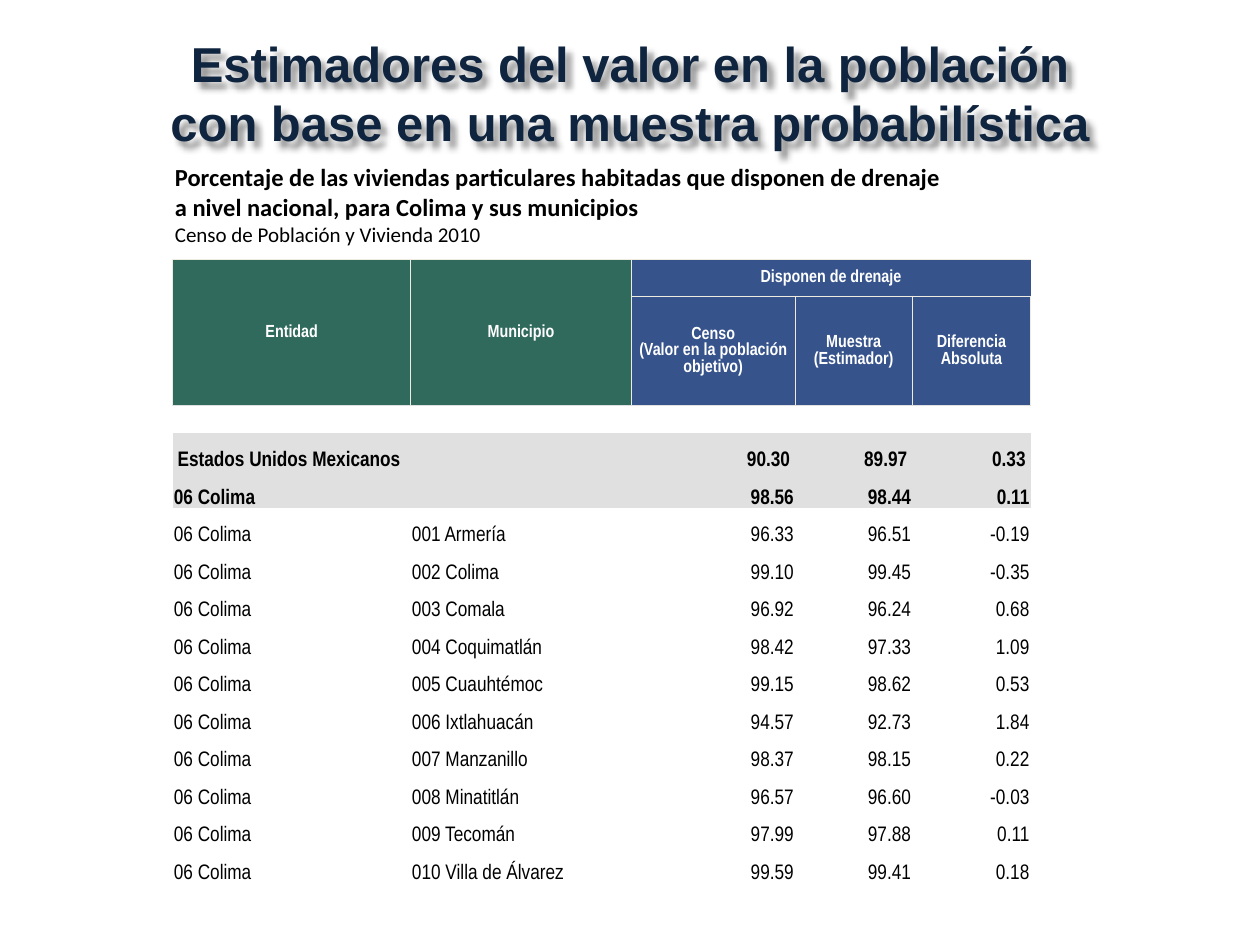
from dataclasses import dataclass

from lxml.etree import SubElement
from pptx import Presentation
from pptx.dml.color import RGBColor
from pptx.enum.text import MSO_ANCHOR, PP_ALIGN
from pptx.oxml.ns import qn
from pptx.util import Inches, Pt


@dataclass(frozen=True)
class Theme:
    navy: str = "0F243E"
    black: str = "000000"
    white: str = "FFFFFF"
    green: str = "306A5C"
    blue: str = "36538C"
    grey: str = "E0E0E0"
    cream: str = "EEECE1"
    title_font: str = "Arial"
    subtitle_font: str = "Calibri"
    table_font: str = "Arial Narrow"
    title_size: int = 28
    title_leading: int = 34
    subtitle_size: int = 14
    source_size: int = 12
    header_size: int = 10
    body_size: int = 12


THEME = Theme()
NO_GRID_STYLE = "{2D5ABB26-0587-4C30-8999-92F81FD0307C}"

# Column widths and row heights of the table, in inches
COLUMNS = (1.89, 1.75, 1.30, 0.93, 0.94)
HEADER_ROWS = (0.29, 0.87, 0.22)
BLANK_ROW = len(HEADER_ROWS) - 1

HEADERS = (  # row, column, last row, last column, text, fill, side inset
    (0, 0, 1, 0, "Entidad", THEME.green, 0.01),
    (0, 1, 1, 1, "Municipio", THEME.green, 0.01),
    (0, 2, 0, 4, "Disponen de drenaje", THEME.blue, 0.01),
    (1, 2, 1, 2, "Censo\n(Valor en la población objetivo)", THEME.blue, 0.04),
    (1, 3, 1, 3, "Muestra\n(Estimador)", THEME.blue, 0.04),
    (1, 4, 1, 4, "Diferencia Absoluta", THEME.blue, 0.01),
)
TOTALS = (
    ("Estados Unidos Mexicanos", "", "90.30", "89.97", "0.33"),
    ("06 Colima", "", "98.56", "98.44", "0.11"),
)
MUNICIPALITIES = (
    ("001 Armería", "96.33", "96.51", "-0.19"),
    ("002 Colima", "99.10", "99.45", "-0.35"),
    ("003 Comala", "96.92", "96.24", "0.68"),
    ("004 Coquimatlán", "98.42", "97.33", "1.09"),
    ("005 Cuauhtémoc", "99.15", "98.62", "0.53"),
    ("006 Ixtlahuacán", "94.57", "92.73", "1.84"),
    ("007 Manzanillo", "98.37", "98.15", "0.22"),
    ("008 Minatitlán", "96.57", "96.60", "-0.03"),
    ("009 Tecomán", "97.99", "97.88", "0.11"),
    ("010 Villa de Álvarez", "99.59", "99.41", "0.18"),
)
BODY = TOTALS + tuple(("06 Colima", *row) for row in MUNICIPALITIES)


def style_paragraph(paragraph, font_name, size, color, bold, align=PP_ALIGN.LEFT):
    paragraph.alignment = align
    for run in paragraph.runs:
        run.font.name = font_name
        run.font.size = Pt(size)
        run.font.bold = bold
        run.font.color.rgb = RGBColor.from_string(color)


def add_text_frame(slide, box):
    shape = slide.shapes.add_textbox(*map(Inches, box))
    shape.text_frame.word_wrap = True
    return shape


def add_soft_shadow(shape):
    effects = SubElement(shape.element.spPr, qn("a:effectLst"))
    shadow = SubElement(effects, qn("a:outerShdw"), blurRad="50800", dist="50800",
                        dir="2700000", algn="tl", rotWithShape="0")
    color = SubElement(shadow, qn("a:srgbClr"), val=THEME.black)
    SubElement(color, qn("a:alpha"), val="43000")


def add_title(slide, box):
    shape = add_text_frame(slide, box)
    paragraph = shape.text_frame.paragraphs[0]
    paragraph.text = ("Estimadores del valor en la población\v"
                      "con base en una muestra probabilística")
    paragraph.line_spacing = Pt(THEME.title_leading)
    style_paragraph(paragraph, THEME.title_font, THEME.title_size, THEME.navy,
                    True, PP_ALIGN.CENTER)
    add_soft_shadow(shape)


def add_subtitle(slide, box):
    text_frame = add_text_frame(slide, box).text_frame
    heading = text_frame.paragraphs[0]
    heading.text = ("Porcentaje de las viviendas particulares habitadas que disponen "
                    "de drenaje\va nivel nacional, para Colima y sus municipios")
    style_paragraph(heading, THEME.subtitle_font, THEME.subtitle_size, THEME.black, True)
    source = text_frame.add_paragraph()
    source.text = "Censo de Población y Vivienda 2010"
    style_paragraph(source, THEME.subtitle_font, THEME.source_size, THEME.black, False)


def set_borders(cell, **colors):
    properties = cell._tc.get_or_add_tcPr()
    for side in "LRTB":
        if side in colors:
            line = SubElement(properties, qn(f"a:ln{side}"), w=str(Pt(0.5)))
            fill = SubElement(line, qn("a:solidFill"))
            SubElement(fill, qn("a:srgbClr"), val=colors[side])


def set_fill(cell, color):
    cell.fill.solid()
    cell.fill.fore_color.rgb = RGBColor.from_string(color)


def set_cell_text(cell, text, size, color, bold, align, anchor, inset):
    cell.margin_left = cell.margin_right = Inches(inset)
    cell.margin_top, cell.margin_bottom = Inches(0.01), 0
    cell.vertical_anchor = anchor
    cell.text_frame.text = text
    for paragraph in cell.text_frame.paragraphs:
        style_paragraph(paragraph, THEME.table_font, size, color, bold, align)
        if not text:  # keeps empty cells from stretching their row
            SubElement(paragraph._p, qn("a:endParaRPr"), sz=str(size * 100))


def fill_header(table):
    for row, column, last_row, last_column, text, color, inset in HEADERS:
        cell = table.cell(row, column)
        if (row, column) != (last_row, last_column):
            cell.merge(table.cell(last_row, last_column))
        set_cell_text(cell, text, THEME.header_size, THEME.white, True,
                      PP_ALIGN.CENTER, MSO_ANCHOR.MIDDLE, inset)
        bottom = THEME.grey if last_row == 1 else THEME.cream
        sides = {"L": THEME.cream, "T": THEME.cream, "B": bottom}
        if last_column == column:
            sides["R"] = THEME.cream
        set_borders(cell, **sides)
        set_fill(cell, color)
    for column in range(len(COLUMNS)):
        cell = table.cell(BLANK_ROW, column)
        set_cell_text(cell, "", THEME.header_size, THEME.black, False,
                      PP_ALIGN.LEFT, MSO_ANCHOR.BOTTOM, 0.01)
        set_borders(cell, T=THEME.grey)


def fill_body(table):
    for index, values in enumerate(BODY):
        is_total = index < len(TOTALS)
        inset = 0.04 if index == 0 else 0.01
        for column, value in enumerate(values):
            cell = table.cell(len(HEADER_ROWS) + index, column)
            align = PP_ALIGN.LEFT if column < 2 else PP_ALIGN.RIGHT
            set_cell_text(cell, value, THEME.body_size, THEME.black, is_total,
                          align, MSO_ANCHOR.BOTTOM, inset)
            if is_total:
                set_fill(cell, THEME.grey)


def add_drainage_table(slide, box):
    height = box[3]
    row_count = len(HEADER_ROWS) + len(BODY)
    frame = slide.shapes.add_table(row_count, len(COLUMNS), *map(Inches, box))
    table = frame.table
    table.first_row = table.horz_banding = False
    table._tbl.tblPr.find(qn("a:tableStyleId")).text = NO_GRID_STYLE
    for column, width in zip(table.columns, COLUMNS):
        column.width = Inches(width)
    body_height = (height - sum(HEADER_ROWS)) / len(BODY)
    for row, row_height in zip(table.rows, HEADER_ROWS + (body_height,) * len(BODY)):
        row.height = Inches(row_height)
    fill_header(table)
    fill_body(table)


def main():
    presentation = Presentation()
    presentation.slide_width, presentation.slide_height = Inches(10), Inches(7.5)
    slide = presentation.slides.add_slide(presentation.slide_layouts[6])
    # Boxes: left, top, width, height in inches
    add_subtitle(slide, (1.29, 1.24, 7.56, 0.77))
    add_drainage_table(slide, (1.37, 2.06, sum(COLUMNS), 4.96))
    add_title(slide, (0, 0.21, 10, 1.15))
    presentation.save("out.pptx")


if __name__ == "__main__":
    main()
